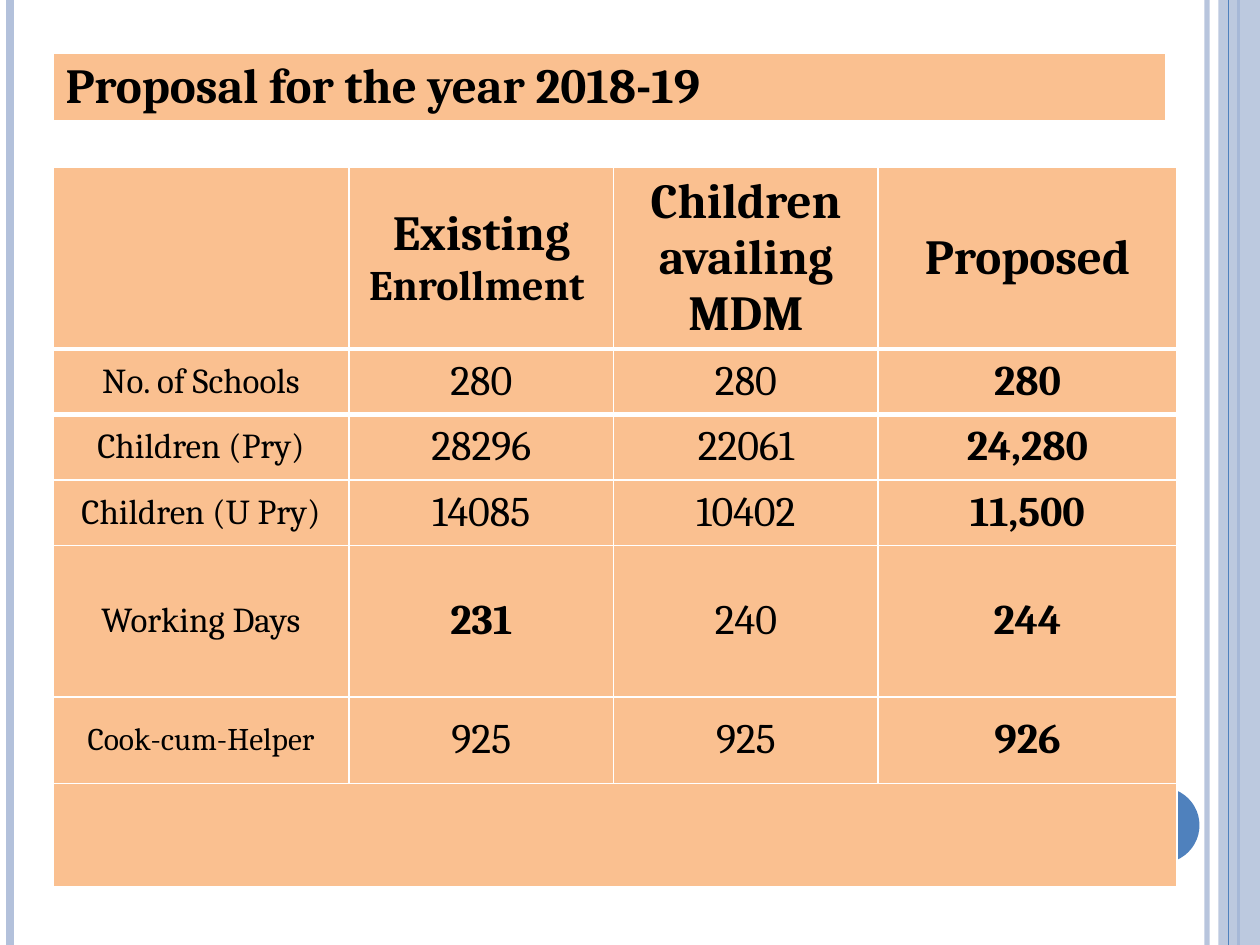
from pptx import Presentation
from pptx.dml.color import RGBColor
from pptx.enum.shapes import MSO_CONNECTOR, MSO_SHAPE
from pptx.enum.text import MSO_ANCHOR, PP_ALIGN
from pptx.oxml.ns import qn
from pptx.util import Inches, Pt
from lxml.etree import SubElement

WIDE, HIGH = 10, 7.5
LEFT = 0.42
FONT = "Cambria"
PEACH, PALE, BLUE, WHITE, BLACK = "FAC090", "B3C1DB", "4F81BD", "FFFFFF", "000000"
COLS = [2.35, 2.1, 2.1, 2.37]
ROWS = [1.39, 0.52, 0.52, 0.52, 1.2, 0.69, 0.82]
HEADS = ["", "Existing", "Children availing MDM", "Proposed"]
BODY = [
    ["No. of Schools", "280", "280", "280"],
    ["Children (Pry)", "28296", "22061", "24,280"],
    ["Children (U Pry)", "14085", "10402", "11,500"],
    ["Working Days", "231", "240", "244"],
    ["Cook-cum-Helper", "925", "925", "926"],
]
THICK = (1, 2)  # row edges drawn with a heavy rule


def paint(fill, color):
    fill.solid()
    fill.fore_color.rgb = RGBColor.from_string(color)


def fade(fill, share):
    tint = fill.fore_color._xFill.find(qn("a:srgbClr"))
    SubElement(tint, qn("a:alpha")).set("val", str(share * 1000))


def add_rule(slide, x, color, width, share=100):
    rule = slide.shapes.add_connector(
        MSO_CONNECTOR.STRAIGHT, Inches(x), 0, Inches(x), Inches(HIGH))
    paint(rule.line.fill, color)
    rule.line.width = Pt(width)
    if share < 100:
        fade(rule.line.fill, share)
    SubElement(rule._element.spPr, qn("a:effectLst"))


def add_block(slide, kind, box, color, share=100):
    block = slide.shapes.add_shape(kind, *map(Inches, box))
    block.shadow.inherit = False
    paint(block.fill, color)
    block.line.fill.background()
    if share < 100:
        fade(block.fill, share)


def add_edges(cell, row):
    # Cell borders come before the fill in the cell properties
    props = cell._tc.get_or_add_tcPr()
    widths = {"L": 1, "R": 1,
              "T": 3 if row in THICK else 1,
              "B": 3 if row + 1 in THICK else 1}
    for side, width in widths.items():
        edge = SubElement(props, qn("a:ln" + side), w=str(Pt(width)))
        solid = SubElement(edge, qn("a:solidFill"))
        SubElement(solid, qn("a:srgbClr"), val=WHITE)


def fill_cell(cell, text, size, bold, align=PP_ALIGN.CENTER):
    cell.text = text
    para = cell.text_frame.paragraphs[0]
    para.alignment = align
    font = para.font
    font.name, font.size, font.bold = FONT, Pt(size), bold
    font.color.rgb = RGBColor.from_string(BLACK)


def add_grid(slide, top, cols, rows):
    grid = slide.shapes.add_table(
        len(rows), len(cols), Inches(LEFT), Inches(top),
        Inches(sum(cols)), Inches(sum(rows))).table
    grid.first_row = grid.horz_banding = False
    for col, width in zip(grid.columns, cols):
        col.width = Inches(width)
    for r, height in enumerate(rows):
        grid.rows[r].height = Inches(height)
        for c in range(len(cols)):
            cell = grid.cell(r, c)
            add_edges(cell, r)
            paint(cell.fill, PEACH)
            cell.vertical_anchor = MSO_ANCHOR.MIDDLE
    return grid


def add_title(slide):
    cell = add_grid(slide, LEFT, [8.83], [0.41]).cell(0, 0)
    cell.vertical_anchor = MSO_ANCHOR.TOP
    fill_cell(cell, "Proposal for the year 2018-19", 28, True, PP_ALIGN.LEFT)


def add_plan(slide):
    grid = add_grid(slide, 1.33, COLS, ROWS)

    # Header row, whose second cell has two text sizes
    for c, text in enumerate(HEADS):
        if text:
            fill_cell(grid.cell(0, c), text, 28, True)
    para = grid.cell(0, 1).text_frame.paragraphs[0]
    para.runs[0].text += " "
    run = para.add_run()
    run.text = "Enrollment "
    run.font.size = Pt(24)

    # Labels, figures and the bold proposal column
    for r, line in enumerate(BODY, 1):
        for c, text in enumerate(line):
            size = 24 if c else 18 if r == len(BODY) else 20
            fill_cell(grid.cell(r, c), text, size, c == 3 or text == "231")

    # Empty closing row
    end = len(ROWS) - 1
    grid.cell(end, 0).merge(grid.cell(end, len(COLS) - 1))


def main():
    deck = Presentation()
    deck.slide_width, deck.slide_height = Inches(WIDE), Inches(HIGH)
    slide = deck.slides.add_slide(deck.slide_layouts[6])
    paint(slide.background.fill, WHITE)

    # Side bands and page disc
    add_rule(slide, 9.58, PALE, 3, 93)
    add_rule(slide, 0.08, PALE, 4.5)
    add_rule(slide, 9.83, BLUE, 1.5)
    add_block(slide, MSO_SHAPE.RECTANGLE, (9.67, 0, 0.33, HIGH), PALE, 87)
    add_rule(slide, 9.75, BLUE, 0.75)
    add_block(slide, MSO_SHAPE.OVAL, (8.92, 6.25, 0.6, 0.6), BLUE)

    # Proposal table and its heading bar
    add_plan(slide)
    add_title(slide)
    deck.save("out.pptx")


if __name__ == "__main__":
    main()
